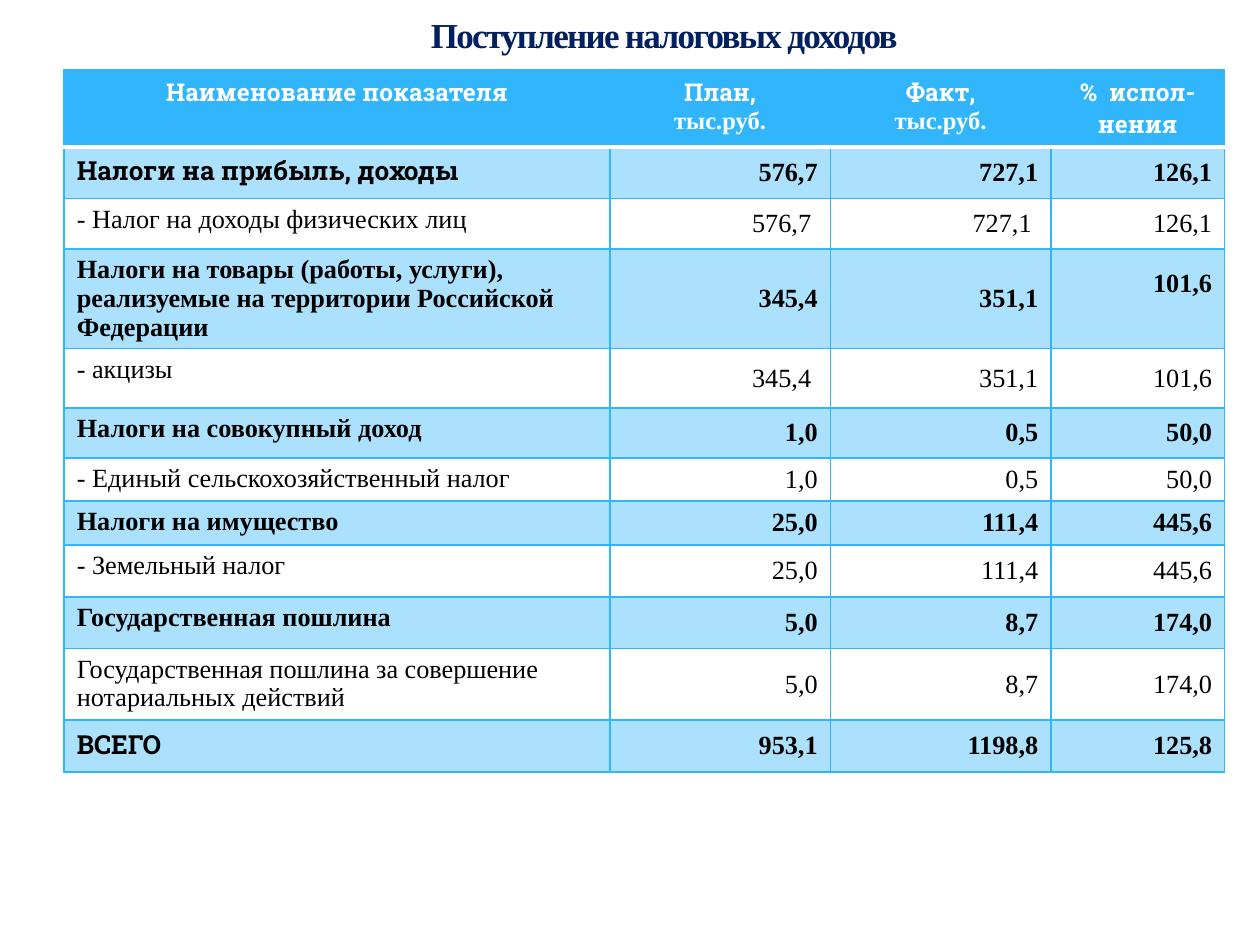
from lxml import etree
from pptx import Presentation
from pptx.dml.color import RGBColor
from pptx.enum.text import MSO_ANCHOR, PP_ALIGN
from pptx.oxml.ns import qn
from pptx.util import Inches, Pt

LEFT, CENTER, RIGHT = PP_ALIGN.LEFT, PP_ALIGN.CENTER, PP_ALIGN.RIGHT
TOP, MIDDLE = MSO_ANCHOR.TOP, MSO_ANCHOR.MIDDLE
BLUE = RGBColor(0x31, 0xB6, 0xFD)
NAVY = RGBColor(0x00, 0x20, 0x60)
WHITE = RGBColor(0xFF, 0xFF, 0xFF)
BLACK = RGBColor(0x00, 0x00, 0x00)
SERIF = "Times New Roman"
SLAB = "Roboto Slab"

COLUMN_WIDTHS = [4.33, 1.75, 1.75, 1.38]
ROW_HEIGHTS = [0.57, 0.41, 0.4, 0.61, 0.47, 0.4, 0.34, 0.35, 0.41, 0.41, 0.57, 0.41]
HEADERS = [
    [("Наименование показателя", SLAB)],
    [("План,", SLAB), ("тыс.руб.", SERIF)],
    [("Факт,", SLAB), ("тыс.руб.", SERIF)],
    [("%  испол-нения", SLAB)],
]
TAXES = [
    ("Налоги на прибыль, доходы", "576,7", "727,1", "126,1"),
    ("- Налог на доходы физических лиц", "576,7 ", "727,1 ", "126,1"),
    ("Налоги на товары (работы, услуги), реализуемые на территории Российской Федерации",
     "345,4", "351,1", "101,6"),
    ("- акцизы", "345,4 ", "351,1", "101,6"),
    ("Налоги на совокупный доход", "1,0", "0,5", "50,0"),
    ("- Единый сельскохозяйственный налог", "1,0", "0,5", "50,0"),
    ("Налоги на имущество", "25,0", "111,4", "445,6"),
    ("- Земельный налог", "25,0", "111,4", "445,6"),
    ("Государственная пошлина", "5,0", "8,7", "174,0"),
    ("Государственная пошлина за совершение нотариальных действий", "5,0", "8,7", "174,0"),
    ("ВСЕГО", "953,1", "1198,8", "125,8"),
]
SLAB_LABELS = {TAXES[0][0], TAXES[-1][0]}


def write(paragraph, text, font=SERIF, size=15, color=BLACK, bold=False, align=LEFT, spacing=None):
    paragraph.alignment = align
    run = paragraph.add_run()
    run.text = text
    run.font.name = font
    run.font.size = Pt(size)
    run.font.bold = bold
    run.font.color.rgb = color
    if spacing is not None:
        run.font._element.set("spc", str(int(spacing * 100)))


class TaxSlide:
    def __init__(self, presentation):
        self.slide = presentation.slides.add_slide(presentation.slide_layouts[6])
        self.accent = BLUE

    def title(self, text, left, top, width, height):
        shape = self.slide.shapes.add_textbox(
            Inches(left), Inches(top), Inches(width), Inches(height))
        frame = shape.text_frame
        frame.word_wrap = True
        frame.vertical_anchor = MIDDLE
        write(frame.paragraphs[0], text, size=20, color=NAVY, bold=True, align=CENTER, spacing=-1)

    def table(self, left, top):
        shape = self.slide.shapes.add_table(
            len(ROW_HEIGHTS), len(COLUMN_WIDTHS), Inches(left), Inches(top),
            Inches(sum(COLUMN_WIDTHS)), Inches(sum(ROW_HEIGHTS)))
        table = shape.table
        table.first_row = False
        table.horz_banding = False
        for column, width in zip(table.columns, COLUMN_WIDTHS):
            column.width = Inches(width)
        for row, height in zip(table.rows, ROW_HEIGHTS):
            row.height = Inches(height)
        return table

    def border(self, cell, side, color, width):
        properties = cell._tc.get_or_add_tcPr()
        line = etree.SubElement(properties, qn(f"a:ln{side}"), w=str(Pt(width)))
        fill = etree.SubElement(line, qn("a:solidFill"))
        etree.SubElement(fill, qn("a:srgbClr"), val=str(color))

    def fill(self, cell, opacity=100):
        cell.fill.solid()
        cell.fill.fore_color.rgb = self.accent
        if opacity < 100:
            color = cell._tc.tcPr.find(qn("a:solidFill")).find(qn("a:srgbClr"))
            etree.SubElement(color, qn("a:alpha"), val=str(opacity * 1000))

    def header_cell(self, cell, lines):
        for side in "LRT":
            self.border(cell, side, self.accent, 1)
        self.border(cell, "B", WHITE, 3)
        self.fill(cell)
        frame = cell.text_frame
        for index, (text, font) in enumerate(lines):
            paragraph = frame.add_paragraph() if index else frame.paragraphs[0]
            write(paragraph, text, font=font, size=14, color=WHITE, bold=True, align=CENTER)

    def body_cell(self, cell, text, group, label, below_header):
        for side in "LRTB":
            if side == "T" and below_header:
                self.border(cell, side, WHITE, 3)
            else:
                self.border(cell, side, self.accent, 1)
        if group:
            self.fill(cell, opacity=40)
        else:
            cell.fill.background()
        cell.vertical_anchor = TOP if label else MIDDLE
        write(cell.text_frame.paragraphs[0], text, bold=group,
              font=SLAB if text in SLAB_LABELS else SERIF, align=LEFT if label else RIGHT)


def main():
    presentation = Presentation()
    presentation.slide_width = Inches(10)
    presentation.slide_height = Inches(7.5)
    tax_slide = TaxSlide(presentation)
    table = tax_slide.table(0.51, 0.55)
    for column, lines in enumerate(HEADERS):
        tax_slide.header_cell(table.cell(0, column), lines)
    for row, values in enumerate(TAXES, start=1):
        for column, text in enumerate(values):
            tax_slide.body_cell(table.cell(row, column), text, group=row % 2 == 1,
                                label=column == 0, below_header=row == 1)
    table.cell(3, 3).margin_bottom = Inches(0.29)
    tax_slide.title("Поступление налоговых доходов", 1.61, 0, 7.32, 0.55)
    presentation.save("out.pptx")


if __name__ == "__main__":
    main()
